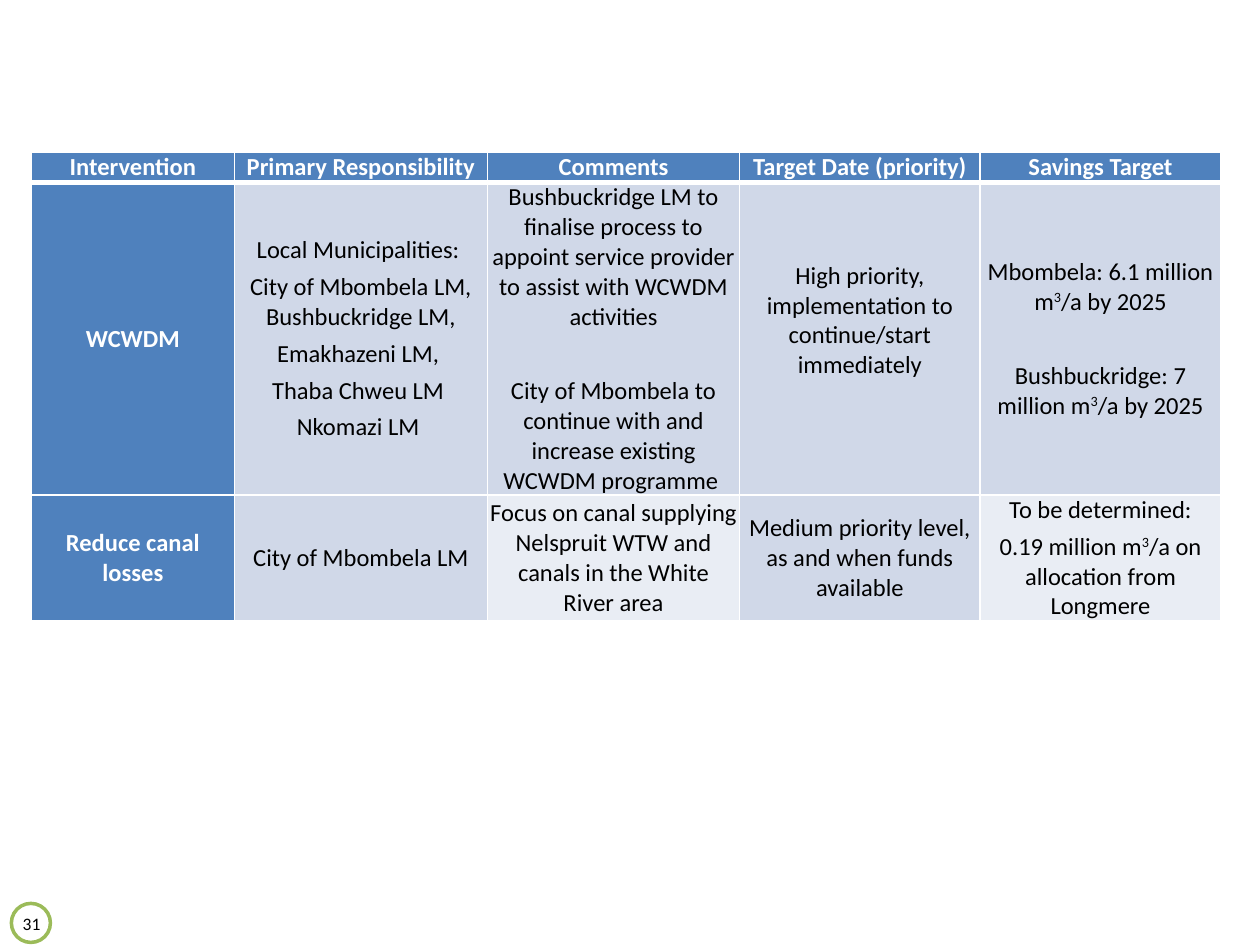
from lxml import etree
from pptx import Presentation
from pptx.dml.color import RGBColor
from pptx.enum import shapes, text
from pptx.oxml import ns
from pptx.util import Inches, Pt

# Content: each cell is a list of paragraphs; ^ raises the next character,
# a leading | sets a paragraph apart from the one above
HEADS = ["Intervention", "Primary Responsibility", "Comments",
         "Target Date (priority)", "Savings Target"]
ROWS = [
    [["WCWDM"],
     ["Local Municipalities: ", "City of Mbombela LM, Bushbuckridge LM,",
      "Emakhazeni LM, ", "Thaba Chweu LM ", "Nkomazi LM "],
     ["Bushbuckridge LM to finalise process to appoint service provider "
      "to assist with WCWDM activities",
      "|City of Mbombela to continue with and increase existing "
      "WCWDM programme "],
     ["High priority, implementation to continue/start immediately"],
     ["Mbombela: 6.1 million m^3/a by 2025",
      "|Bushbuckridge: 7 million m^3/a by 2025"]],
    [["Reduce canal losses"],
     ["City of Mbombela LM"],
     ["Focus on canal supplying Nelspruit WTW and canals in the "
      "White River area"],
     ["Medium priority level, as and when funds available"],
     ["To be determined:",
      "0.19 million m^3/a on allocation from Longmere"]],
]
PAGE = "31"

FONT = "Calibri"
BLUE, PALE, LIGHT = "4F81BD", "D0D8E8", "E9EDF4"
WHITE, BLACK, GREEN = "FFFFFF", "000000", "9BBB59"
WIDTHS = [1.61, 2.01, 2, 1.91, 1.91]
HEIGHTS = [0.24, 2.48, 1]
LIFTED = (1, 3)  # cell whose text sits above the middle


def color(code):
    return RGBColor.from_string(code)


def style(para, size, code, bold=False):
    para.alignment = text.PP_ALIGN.CENTER
    font = para.font
    font.name, font.size, font.bold = FONT, Pt(size), bold
    font.color.rgb = color(code)


def add_runs(para, line):
    first, *rest = line.split("^")
    para.add_run().text = first
    for part in rest:
        power = para.add_run()
        power.text = part[0]
        power._r.get_or_add_rPr().set("baseline", "30000")
        para.add_run().text = part[1:]


def add_edges(cell, widths):
    props = cell._tc.get_or_add_tcPr()
    for side, width in zip("LRTB", widths):
        edge = etree.SubElement(props, ns.qn(f"a:ln{side}"), w=str(Pt(width)))
        fill = etree.SubElement(edge, ns.qn("a:solidFill"))
        etree.SubElement(fill, ns.qn("a:srgbClr"), val=WHITE)


def fill_cell(cell, lines, row, col):
    head = row == 0 or col == 0
    add_edges(cell, (1, 1, 3 if row == 1 else 1, 3 if row == 0 else 1))
    cell.fill.solid()
    striped = row == 2 and col in (2, 4)
    cell.fill.fore_color.rgb = color(BLUE if head else LIGHT if striped else PALE)
    cell.vertical_anchor = text.MSO_ANCHOR.MIDDLE
    cell.margin_left = cell.margin_right = Inches(0.02)
    cell.margin_top = 0
    cell.margin_bottom = Inches(0.29 if (row, col) == LIFTED else 0)
    frame = cell.text_frame
    for i, line in enumerate(lines):
        para = frame.add_paragraph() if i else frame.paragraphs[0]
        add_runs(para, line.lstrip("|"))
        style(para, 14, WHITE if head else BLACK, head)
        para.space_before = Pt(0 if i == 0 else 23.5 if line[0] == "|" else 2)
        para.space_after = Pt(2)


deck = Presentation()
deck.slide_width, deck.slide_height = Inches(10), Inches(7.5)
slide = deck.slides.add_slide(deck.slide_layouts[6])

# Page number in a ring
ring = slide.shapes.add_shape(shapes.MSO_SHAPE.OVAL, Inches(0.09), Inches(7.17),
                              Inches(0.31), Inches(0.31))
ring.shadow.inherit = False
ring.fill.solid()
ring.fill.fore_color.rgb = color(WHITE)
ring.line.color.rgb = color(GREEN)
ring.line.width = Pt(2)

box = slide.shapes.add_textbox(Inches(0.09), Inches(7.2), Inches(0.32), Inches(0.2))
number = box.text_frame
number.word_wrap = True
number.margin_left = number.margin_right = 0
number.text = PAGE
style(number.paragraphs[0], 10, BLACK)

# Table of interventions
table = slide.shapes.add_table(len(HEIGHTS), len(WIDTHS), Inches(0.25), Inches(1.21),
                               Inches(sum(WIDTHS)), Inches(sum(HEIGHTS))).table
for column, width in zip(table.columns, WIDTHS):
    column.width = Inches(width)
for line, height in zip(table.rows, HEIGHTS):
    line.height = Inches(height)
for r, cells in enumerate([[[head] for head in HEADS]] + ROWS):
    for c, lines in enumerate(cells):
        fill_cell(table.cell(r, c), lines, r, c)

deck.save("out.pptx")
